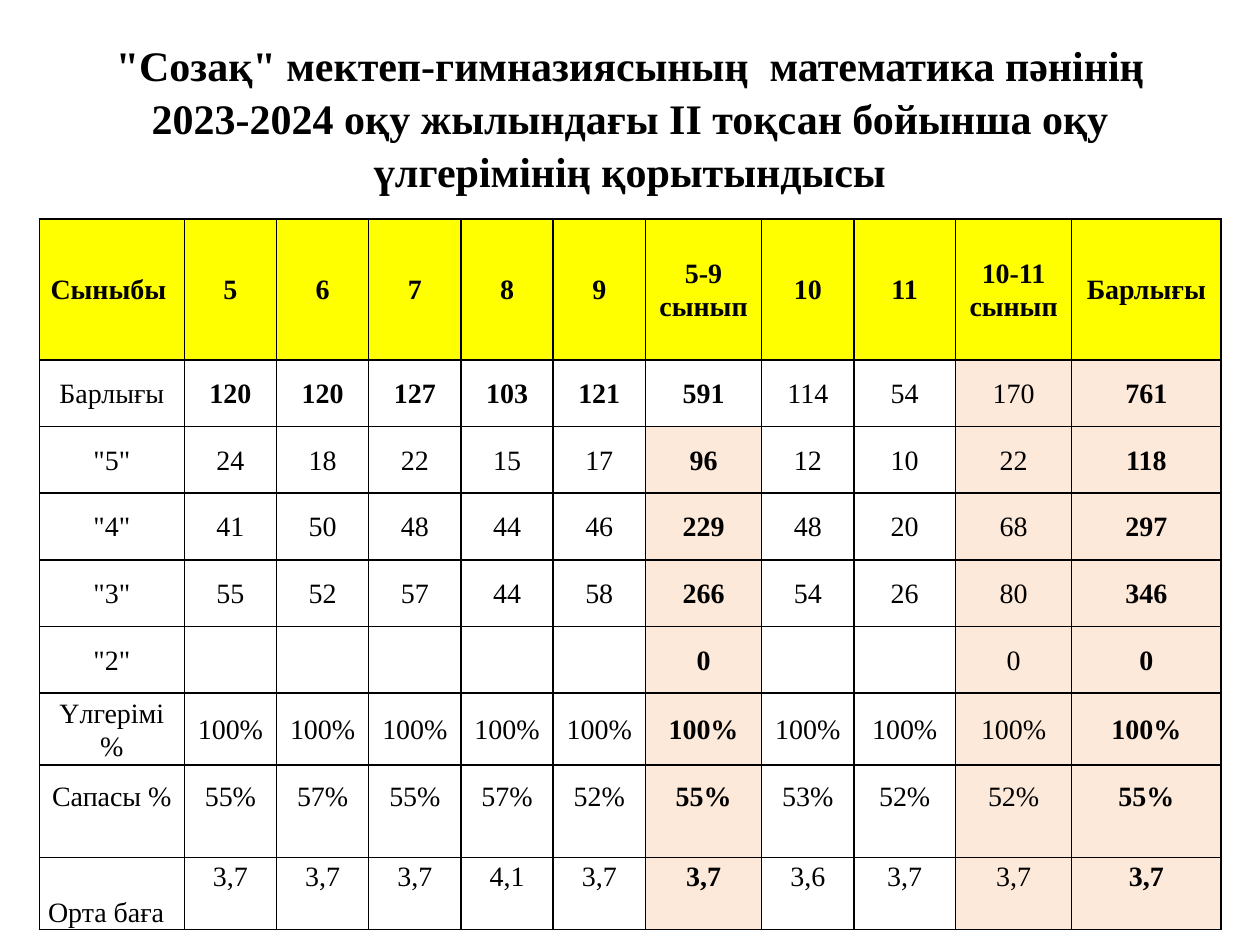
from lxml import etree
from pptx import Presentation
from pptx.dml.color import RGBColor
from pptx.enum.text import MSO_ANCHOR, PP_ALIGN
from pptx.oxml.ns import qn
from pptx.util import Pt

CENTER = PP_ALIGN.CENTER
LEFT = PP_ALIGN.LEFT
MIDDLE = MSO_ANCHOR.MIDDLE
FONT = "Times New Roman"
COLORS = {
    "text": "000000",
    "border": "000000",
    "header": "FFFF00",
    "total": "FDE9D9",
    "plain": "FFFFFF",
}


def write_text(tf, text, size, bold=False, align=CENTER, spacing=1.07):
    p = tf.paragraphs[0]
    p.alignment = align
    p.line_spacing = spacing
    r = p.add_run()
    r.text = text
    r.font.name = FONT
    r.font.size = Pt(size)
    r.font.bold = bold
    r.font.color.rgb = RGBColor.from_string(COLORS["text"])


prs = Presentation()
prs.slide_width = Pt(720)
prs.slide_height = Pt(540)
slide = prs.slides.add_slide(prs.slide_layouts[6])

title = slide.shapes.add_textbox(Pt(36), Pt(21.6), Pt(648), Pt(90))
tf = title.text_frame
tf.word_wrap = True
tf.vertical_anchor = MIDDLE
write_text(
    tf,
    '"Созақ" мектеп-гимназиясының  математика пәнінің 2023-2024 оқу жылындағы '
    "ІІ тоқсан бойынша оқу үлгерімінің қорытындысы",
    size=24, bold=True, spacing=1.05,
)

rows = [
    ["Сыныбы ", "5", "6", "7", "8", "9", "5-9 сынып", "10", "11", "10-11 сынып", "Барлығы"],
    ["Барлығы", "120", "120", "127", "103", "121", "591", "114", "54", "170", "761"],
    ['"5"', "24", "18", "22", "15", "17", "96", "12", "10", "22", "118"],
    ['"4"', "41", "50", "48", "44", "46", "229", "48", "20", "68", "297"],
    ['"3"', "55", "52", "57", "44", "58", "266", "54", "26", "80", "346"],
    ['"2"', "", "", "", "", "", "0", "", "", "0", "0"],
    ["Үлгерімі %"] + ["100%"] * 10,
    ["Сапасы %", "55%", "57%", "55%", "57%", "52%", "55%", "53%", "52%", "52%", "55%"],
    [""] * 11,
    ["", "3,7", "3,7", "3,7", "4,1", "3,7", "3,7", "3,6", "3,7", "3,7", "3,7"],
    ["Орта баға"] + [""] * 10,
]
col_widths = [82.8] + [52.7] * 5 + [66.5, 52.7, 58, 66.5, 85.3]
row_heights = [80.6] + [38.1] * 5 + [39.5, 35, 18, 18, 18]
MIDDLE_TOTAL, LAST_TOTALS = 6, (9, 10)
OPEN_BELOW, OPEN_ABOVE = (7, 9), (8, 10)

table = slide.shapes.add_table(
    len(rows), len(col_widths), Pt(22.5), Pt(125),
    Pt(sum(col_widths)), Pt(sum(row_heights)),
).table
table.horz_banding = False
for col, width in zip(table.columns, col_widths):
    col.width = Pt(width)
for row, height in zip(table.rows, row_heights):
    row.height = Pt(height)

for i, row in enumerate(rows):
    for j, text in enumerate(row):
        cell = table.cell(i, j)
        cell.vertical_anchor = MIDDLE
        cell.margin_left = cell.margin_right = Pt(5)
        cell.margin_top = cell.margin_bottom = Pt(0)

        tcPr = cell._tc.get_or_add_tcPr()
        for side in ("lnL", "lnR", "lnT", "lnB"):
            ln = etree.SubElement(tcPr, qn("a:" + side), w=str(Pt(1)))
            if (side == "lnB" and i in OPEN_BELOW) or (side == "lnT" and i in OPEN_ABOVE):
                etree.SubElement(ln, qn("a:noFill"))
            else:
                fill = etree.SubElement(ln, qn("a:solidFill"))
                etree.SubElement(fill, qn("a:srgbClr"), val=COLORS["border"])

        if i == 0:
            color = "header"
        elif j in LAST_TOTALS or (j == MIDDLE_TOTAL and i > 1):
            color = "total"
        else:
            color = "plain"
        cell.fill.solid()
        cell.fill.fore_color.rgb = RGBColor.from_string(COLORS[color])

        if text:
            bold = i == 0 or j in (6, 10) or (i == 1 and 1 <= j <= 5)
            align = LEFT if text == "Орта баға" else CENTER
            write_text(cell.text_frame, text, size=16, bold=bold, align=align)
        else:
            p = cell.text_frame.paragraphs[0]
            etree.SubElement(p._p, qn("a:endParaRPr"), sz="800")

prs.save("out.pptx")
